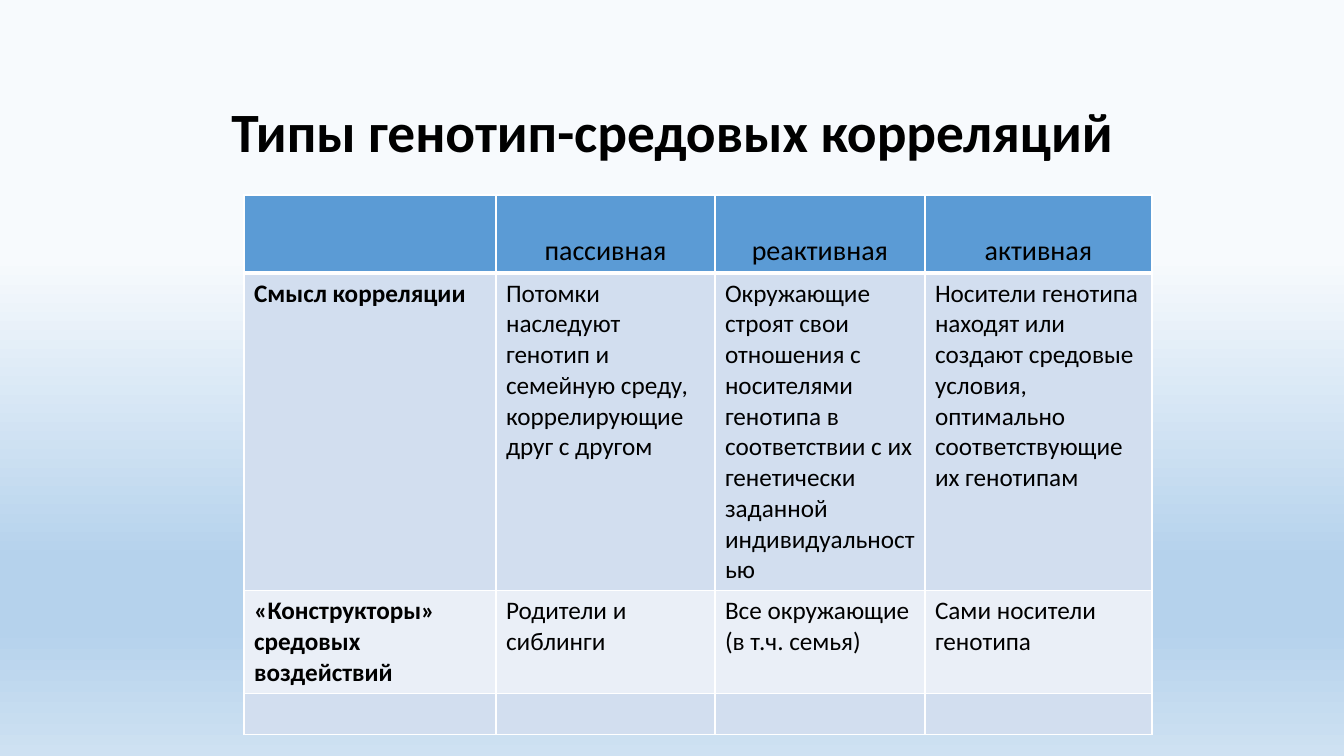
from lxml.etree import SubElement
from pptx import Presentation
from pptx.dml.color import RGBColor
from pptx.enum.text import MSO_ANCHOR, PP_ALIGN
from pptx.oxml.ns import qn
from pptx.util import Pt

PX = 914400 / 100.8
FONT = "Calibri"
COLORS = {
    "text": "000000",
    "border": "FFFFFF",
    "header": "5B9BD5",
    "odd": "D2DEEF",
    "even": "EAEFF7",
}
SKY = [(34, "F7FAFD"), (74, "B5D2EC"), (83, "B5D2EC"), (100, "CEE1F2")]
COLUMN_WIDTHS = [252, 219, 210, 227]
ROW_HEIGHTS = [78, 317, 103, 41]
CORRELATIONS = [
    ["", "пассивная", "реактивная", "активная"],
    [
        "Смысл корреляции",
        "Потомки наследуют генотип и семейную среду, коррелирующие друг с другом",
        "Окружающие строят свои отношения с носителями генотипа в соответствии "
        "с их генетически заданной индивидуальностью",
        "Носители генотипа находят или создают средовые условия, оптимально "
        "соответствующие их генотипам",
    ],
    [
        "«Конструкторы» средовых воздействий",
        "Родители и сиблинги",
        "Все окружающие (в т.ч. семья)",
        "Сами носители генотипа",
    ],
    ["", "", "", ""],
]


def px(length):
    return round(length * PX)


def add_run(paragraph, text, size, bold=False):
    run = paragraph.add_run()
    run.text = text
    run.font.name = FONT
    run.font.size = Pt(size)
    run.font.bold = bold
    run.font.color.rgb = RGBColor.from_string(COLORS["text"])


def paint_background(slide):
    fill = slide.background.fill
    fill.gradient()
    fill.gradient_angle = 270
    stops = slide.element.find(".//" + qn("a:gsLst"))
    for stop in list(stops):
        stops.remove(stop)
    for percent, color in SKY:
        stop = SubElement(stops, qn("a:gs"), pos=str(percent * 1000))
        SubElement(stop, qn("a:srgbClr"), val=color)


def place_title(slide, left, top, width, height):
    title = slide.shapes.title
    title.left, title.top = px(left), px(top)
    title.width, title.height = px(width), px(height)
    title.text_frame.vertical_anchor = MSO_ANCHOR.MIDDLE
    heading = title.text_frame.paragraphs[0]
    heading.alignment = PP_ALIGN.CENTER
    heading.line_spacing = 0.9
    add_run(heading, "Типы генотип-средовых корреляций", 39.6, True)


def draw_borders(cell, bottom_points):
    properties = cell._tc.get_or_add_tcPr()
    for side, points in (("L", 1), ("R", 1), ("T", 1), ("B", bottom_points)):
        line = SubElement(properties, qn("a:ln" + side), w=str(Pt(points)))
        paint = SubElement(line, qn("a:solidFill"))
        SubElement(paint, qn("a:srgbClr"), val=COLORS["border"])


def fill_cell(cell, text, row, column):
    is_header = row == 0
    draw_borders(cell, 3 if is_header else 1)
    shade = "header" if is_header else "odd" if row % 2 else "even"
    cell.fill.solid()
    cell.fill.fore_color.rgb = RGBColor.from_string(COLORS[shade])
    cell.vertical_anchor = MSO_ANCHOR.BOTTOM if is_header else MSO_ANCHOR.TOP
    paragraph = cell.text_frame.paragraphs[0]
    paragraph.alignment = PP_ALIGN.CENTER if is_header else PP_ALIGN.LEFT
    if text:
        add_run(paragraph, text, 20 if is_header else 18, column == 0)


def place_correlations(slide, left, top):
    table = slide.shapes.add_table(
        len(ROW_HEIGHTS), len(COLUMN_WIDTHS), px(left), px(top),
        px(sum(COLUMN_WIDTHS)), px(sum(ROW_HEIGHTS)),
    ).table
    table.first_row = False
    table.horz_banding = False
    for column, width in zip(table.columns, COLUMN_WIDTHS):
        column.width = px(width)
    for row, height in zip(table.rows, ROW_HEIGHTS):
        row.height = px(height)
    for row, texts in enumerate(CORRELATIONS):
        for column, text in enumerate(texts):
            fill_cell(table.cell(row, column), text, row, column)


def main():
    presentation = Presentation()
    presentation.slide_width = px(1344)
    presentation.slide_height = px(756)
    slide = presentation.slides.add_slide(presentation.slide_layouts[5])
    paint_background(slide)
    place_title(slide, 219, 76, 907, 118)
    place_correlations(slide, 244, 195)
    presentation.save("out.pptx")


if __name__ == "__main__":
    main()
